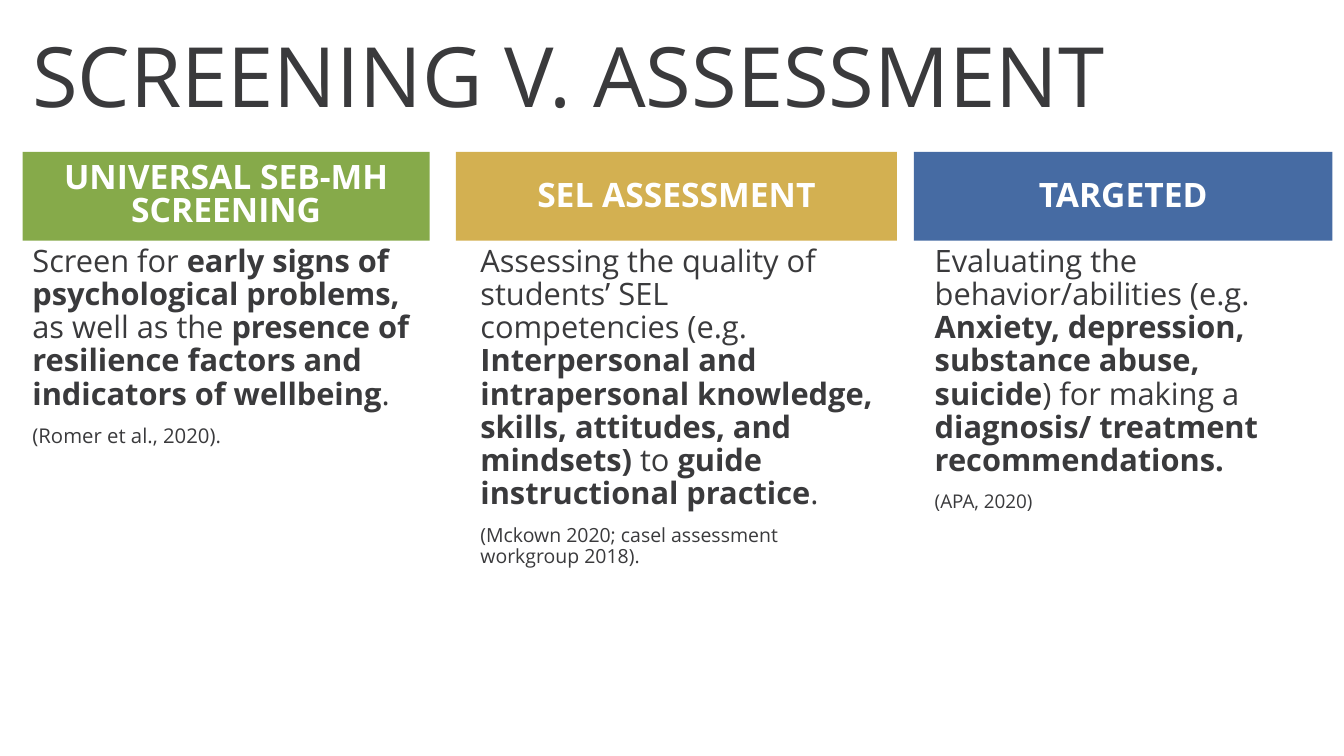
from dataclasses import dataclass

from pptx import Presentation
from pptx.dml.color import RGBColor
from pptx.enum.shapes import MSO_SHAPE as SHAPE
from pptx.enum.text import MSO_ANCHOR as ANCHOR, PP_ALIGN as ALIGN
from pptx.slide import Slide
from pptx.text.text import TextFrame
from pptx.util import Pt

INK = RGBColor(0x3A, 0x3A, 0x3C)
WHITE = RGBColor(0xFF, 0xFF, 0xFF)
GREEN = RGBColor(0x86, 0xAA, 0x4A)
GOLD = RGBColor(0xD3, 0xB0, 0x51)
BLUE = RGBColor(0x46, 0x6B, 0xA3)

HEADER_TOP, HEADER_H = 108.5, 63.4
BODY_TOP, BODY_H = 171.9, 283.7


@dataclass(frozen=True)
class Run:
    text: str
    bold: bool = False


@dataclass(frozen=True)
class Column:
    heading: str
    color: RGBColor
    left: float
    width: float
    spacing: float
    body_left: float
    body_width: float
    body: tuple[Run, ...]
    citation: str
    citation_size: float


COLUMNS = (
    Column("UNIVERSAL SEB-MH SCREENING", GREEN, 16.1, 290.9, 0.8, 16.1, 290.9, (
        Run("Screen for "),
        Run("early signs of psychological problems, ", True),
        Run("as well as the"),
        Run(" presence of resilience factors and indicators of wellbeing", True),
        Run("."),
    ), "(Romer et al., 2020).", 14.5),
    Column("SEL ASSESSMENT", GOLD, 325.7, 314.9, 0.9, 336.1, 295.3, (
        Run("Assessing the quality of students’ SEL competencies (e.g. "),
        Run("Interpersonal and intrapersonal knowledge, skills, attitudes, and mindsets)", True),
        Run(" to "),
        Run("guide instructional practice", True),
        Run("."),
    ), "(Mckown 2020; casel assessment workgroup 2018).", 13.9),
    Column("TARGETED", BLUE, 652.8, 299, 0.9, 660.6, 290.9, (
        Run("Evaluating the behavior/abilities (e.g. "),
        Run("Anxiety, depression, substance abuse, suicide", True),
        Run(") for making a "),
        Run("diagnosis/ treatment recommendations.", True),
    ), "(APA, 2020)", 13.5),
)


def add_paragraph(tf: TextFrame, runs: tuple[Run, ...], size: float, color: RGBColor,
                  first: bool = True, **fmt) -> None:
    p = tf.paragraphs[0] if first else tf.add_paragraph()
    for name, value in fmt.items():
        setattr(p, name, value)
    for run in runs:
        r = p.add_run()
        r.text = run.text
        font = {"name": "Open Sans", "size": Pt(size), "bold": run.bold}
        for name, value in font.items():
            setattr(r.font, name, value)
        r.font.color.rgb = color


def add_text_box(s: Slide, left: float, top: float, width: float, height: float,
                 anchor: ANCHOR) -> TextFrame:
    tf = s.shapes.add_textbox(Pt(left), Pt(top), Pt(width), Pt(height)).text_frame
    tf.word_wrap = True
    tf.vertical_anchor = anchor
    return tf


def add_header(s: Slide, column: Column) -> None:
    sp = s.shapes.add_shape(SHAPE.RECTANGLE, Pt(column.left), Pt(HEADER_TOP),
                            Pt(column.width), Pt(HEADER_H))
    sp.shadow.inherit = False
    sp.fill.solid()
    sp.fill.fore_color.rgb = column.color
    sp.line.fill.background()
    tf = sp.text_frame
    tf.word_wrap = True
    tf.vertical_anchor = ANCHOR.MIDDLE
    add_paragraph(tf, (Run(column.heading, True),), 24, WHITE,
                  alignment=ALIGN.CENTER, line_spacing=column.spacing)


def add_body(s: Slide, column: Column) -> None:
    tf = add_text_box(s, column.body_left, BODY_TOP, column.body_width, BODY_H, ANCHOR.TOP)
    add_paragraph(tf, column.body, 22, INK, line_spacing=0.9)
    add_paragraph(tf, (Run(column.citation),), column.citation_size, INK, first=False,
                  line_spacing=0.9, space_before=Pt(10))


def main() -> None:
    prs = Presentation()
    prs.slide_width, prs.slide_height = Pt(960), Pt(540)
    s = prs.slides.add_slide(prs.slide_layouts[6])
    title = add_text_box(s, 15.8, 5.2, 889.2, 104.4, ANCHOR.MIDDLE)
    add_paragraph(title, (Run("SCREENING V. ASSESSMENT"),), 59.4, INK, line_spacing=0.9)
    for column in COLUMNS:
        add_header(s, column)
        add_body(s, column)
    prs.save("out.pptx")


if __name__ == "__main__":
    main()
